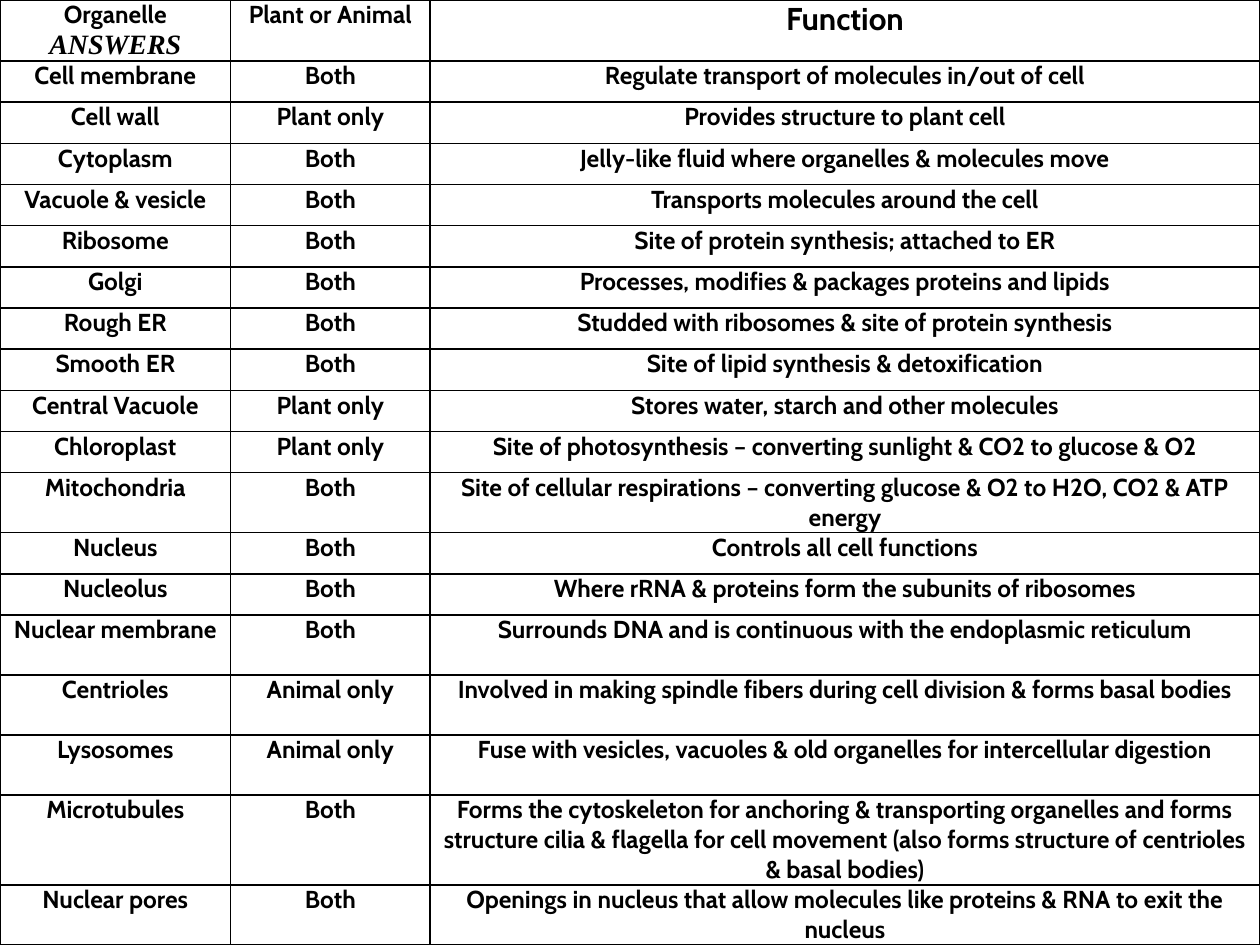
from pptx import Presentation
from pptx.dml.color import RGBColor
from pptx.enum.text import PP_ALIGN
from pptx.oxml import parse_xml
from pptx.oxml.ns import nsdecls
from pptx.util import Cm, Pt

COLORS = {"ink": "000000", "paper": "FFFFFF"}
BODY_FONT, ANSWER_FONT = "Cabin", "Times New Roman"

COLUMN_WIDTHS = (4.65, 4.02, 16.73)
# Row height by the number of text lines it has room for
ROW_HEIGHTS = {1: 0.83, 2: 1.21, 3: 1.81}

HEADINGS = ("Organelle\nANSWERS", "Plant or Animal", "Function")
ORGANELLES = [
    # lines, organelle, found in, function
    (1, "Cell membrane", "Both", "Regulate transport of molecules in/out of cell"),
    (1, "Cell wall", "Plant only", "Provides structure to plant cell"),
    (1, "Cytoplasm", "Both", "Jelly-like fluid where organelles & molecules move"),
    (1, "Vacuole & vesicle", "Both", "Transports molecules around the cell"),
    (1, "Ribosome", "Both", "Site of protein synthesis; attached to ER"),
    (1, "Golgi", "Both", "Processes, modifies & packages proteins and lipids"),
    (1, "Rough ER", "Both", "Studded with ribosomes & site of protein synthesis"),
    (1, "Smooth ER", "Both", "Site of lipid synthesis & detoxification"),
    (1, "Central Vacuole", "Plant only", "Stores water, starch and other molecules"),
    (1, "Chloroplast", "Plant only",
     "Site of photosynthesis – converting sunlight & CO2 to glucose & O2"),
    (2, "Mitochondria", "Both",
     "Site of cellular respirations – converting glucose & O2 to H2O, CO2 & ATP energy"),
    (1, "Nucleus", "Both", "Controls all cell functions"),
    (1, "Nucleolus", "Both", "Where rRNA & proteins form the subunits of ribosomes"),
    (2, "Nuclear membrane", "Both",
     "Surrounds DNA and is continuous with the endoplasmic reticulum"),
    (2, "Centrioles", "Animal only",
     "Involved in making spindle fibers during cell division & forms basal bodies"),
    (2, "Lysosomes", "Animal only",
     "Fuse with vesicles, vacuoles & old organelles for intercellular digestion"),
    (3, "Microtubules", "Both",
     "Forms the cytoskeleton for anchoring & transporting organelles and forms "
     "structure cilia & flagella for cell movement (also forms structure of "
     "centrioles & basal bodies)"),
    (2, "Nuclear pores", "Both",
     "Openings in nucleus that allow molecules like proteins & RNA to exit the nucleus"),
]


def set_font(p, size, name=BODY_FONT, italic=False):
    p.alignment = PP_ALIGN.CENTER
    p.font.name, p.font.size = name, Pt(size)
    p.font.bold, p.font.italic = True, italic
    p.font.color.rgb = RGBColor.from_string(COLORS["ink"])


def set_borders(cell):
    tcPr = cell._tc.get_or_add_tcPr()
    for i, side in enumerate(("lnL", "lnR", "lnT", "lnB")):
        # Border lines come before the fill in the cell properties
        tcPr.insert(i, parse_xml(
            f'<a:{side} {nsdecls("a")} w="{Pt(1)}"><a:solidFill>'
            f'<a:srgbClr val="{COLORS["ink"]}"/></a:solidFill></a:{side}>'))


def fill_cell(cell, text):
    cell.margin_left = cell.margin_right = Cm(0.18)
    cell.margin_top = cell.margin_bottom = 0
    cell.fill.solid()
    cell.fill.fore_color.rgb = RGBColor.from_string(COLORS["paper"])
    set_borders(cell)
    cell.text_frame.text = text
    for p in cell.text_frame.paragraphs:
        set_font(p, 14)


def add_organelle_table(slide, left, top, width):
    rows = [(2, *HEADINGS), *ORGANELLES]
    heights = [Cm(ROW_HEIGHTS[lines]) for lines, *_ in rows]
    table = slide.shapes.add_table(
        len(rows), len(COLUMN_WIDTHS), left, top, width, sum(heights)).table
    for column, share in zip(table.columns, COLUMN_WIDTHS):
        column.width = int(width * share / sum(COLUMN_WIDTHS))
    for row, height, (_, *texts) in zip(table.rows, heights, rows):
        row.height = height
        for cell, text in zip(row.cells, texts):
            fill_cell(cell, text)

    # Headings that differ from the rest of the table
    set_font(table.cell(0, 0).text_frame.paragraphs[1], 16, ANSWER_FONT, italic=True)
    set_font(table.cell(0, 2).text_frame.paragraphs[0], 18)


def main():
    prs = Presentation()
    prs.slide_width, prs.slide_height = Cm(25.4), Cm(19.05)
    slide = prs.slides.add_slide(prs.slide_layouts[6])
    add_organelle_table(slide, 0, 0, prs.slide_width)
    prs.save("out.pptx")


if __name__ == "__main__":
    main()
